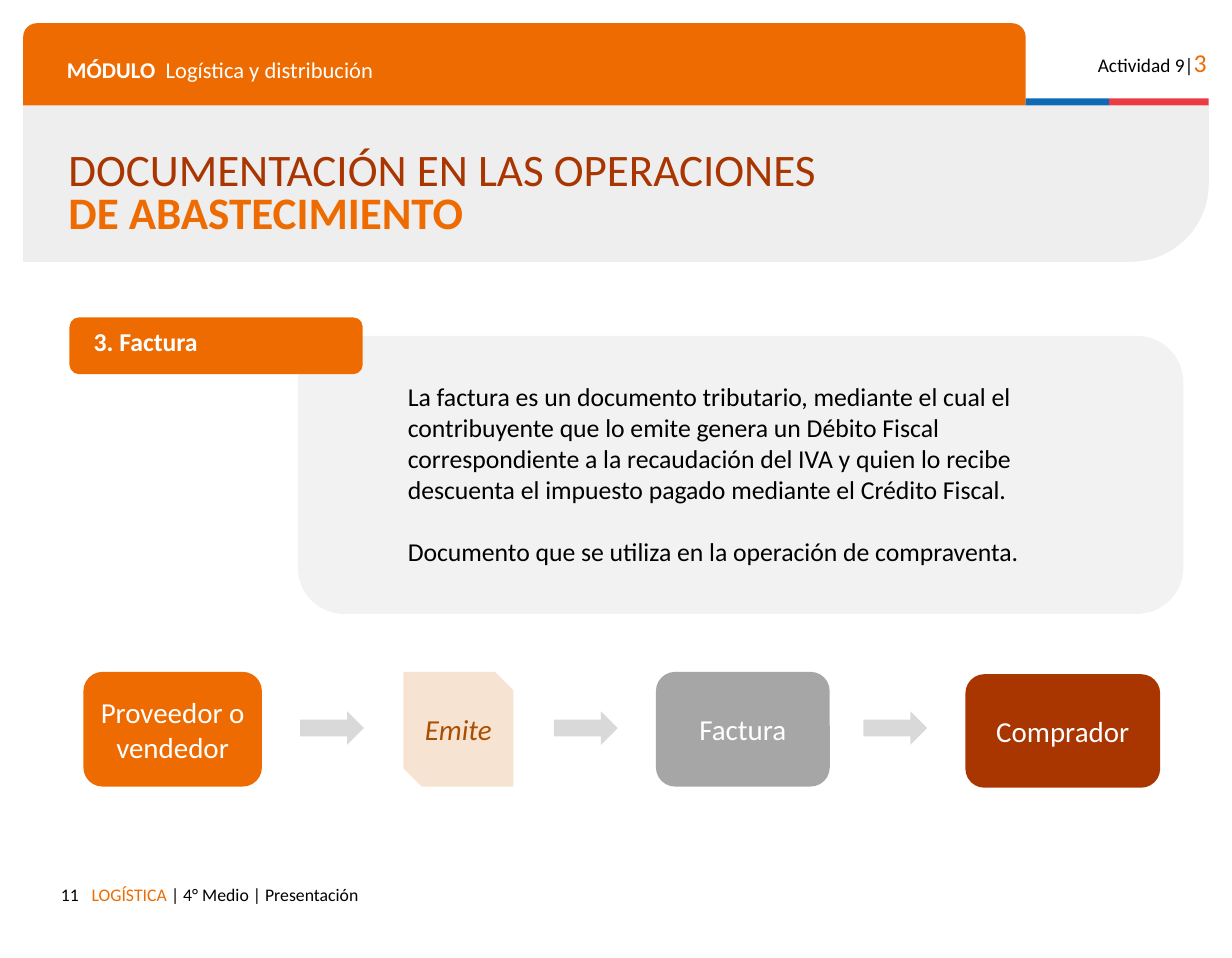
"""Build the slide about the invoice in supply operations."""
from dataclasses import dataclass

import pptx
import pptx.dml.color
import pptx.enum.shapes
import pptx.enum.text
import pptx.util

Inches = pptx.util.Inches
RGBColor = pptx.dml.color.RGBColor
MSO_SHAPE = pptx.enum.shapes.MSO_SHAPE
PP_ALIGN = pptx.enum.text.PP_ALIGN
MSO_ANCHOR = pptx.enum.text.MSO_ANCHOR
MSO_AUTO_SIZE = pptx.enum.text.MSO_AUTO_SIZE

ORANGE = RGBColor(0xED, 0x6B, 0x00)
RUST = RGBColor(0xA9, 0x35, 0x01)
BROWN = RGBColor(0xAA, 0x4E, 0x02)
PEACH = RGBColor(0xF7, 0xE3, 0xD1)
BLUE = RGBColor(0x0F, 0x69, 0xB4)
RED = RGBColor(0xEB, 0x3C, 0x46)
BLACK = RGBColor(0x00, 0x00, 0x00)
WHITE = RGBColor(0xFF, 0xFF, 0xFF)
BAND_GRAY = RGBColor(0xEE, 0xEE, 0xEE)
PANEL_GRAY = RGBColor(0xF2, 0xF2, 0xF2)
ARROW_GRAY = RGBColor(0xD9, 0xD9, 0xD9)
STEP_GRAY = RGBColor(0xA6, 0xA6, 0xA6)

FONT = "Calibri"


@dataclass(frozen=True)
class Run:
    text: str
    color: RGBColor = BLACK
    size: float = 16
    bold: bool = False
    italic: bool = False


@dataclass(frozen=True)
class Box:
    kind: MSO_SHAPE
    at: tuple[float, float, float, float]
    fill: RGBColor
    adj: tuple[float, ...] = ()
    label: Run | None = None


BACKGROUND = [
    Box(MSO_SHAPE.ROUND_2_SAME_RECTANGLE, (0.2, 0.2, 8.65, 0.71), ORANGE, (0.167, 0)),
    Box(MSO_SHAPE.RECTANGLE, (8.85, 0.85, 0.72, 0.06), BLUE),
    Box(MSO_SHAPE.RECTANGLE, (9.57, 0.85, 0.86, 0.06), RED),
    Box(MSO_SHAPE.ROUNDED_RECTANGLE, (2.57, 2.9, 7.64, 2.4), PANEL_GRAY),
    Box(MSO_SHAPE.ROUNDED_RECTANGLE, (0.6, 2.74, 2.53, 0.49), ORANGE),
]
STEPS = [
    Box(MSO_SHAPE.ROUNDED_RECTANGLE, (0.72, 5.8, 1.54, 0.99), ORANGE, (0.167,),
        Run("Proveedor o vendedor", WHITE, 18)),
    Box(MSO_SHAPE.SNIP_2_DIAG_RECTANGLE, (3.48, 5.8, 0.95, 0.99), PEACH, (0, 0.167),
        Run("Emite", BROWN, 18, italic=True)),
    Box(MSO_SHAPE.ROUNDED_RECTANGLE, (5.66, 5.8, 1.5, 0.99), STEP_GRAY, (0.167,),
        Run("Factura", WHITE, 18)),
    Box(MSO_SHAPE.ROUNDED_RECTANGLE, (8.33, 5.82, 1.68, 0.98), RUST, (0.167,),
        Run("Comprador", WHITE, 18)),
]
ARROWS = [Box(MSO_SHAPE.RIGHT_ARROW, (x, 6.14, 0.55, 0.29), ARROW_GRAY, (0.5, 0.5))
          for x in (2.59, 4.78, 7.45)]


def write(sp, paragraphs: list[list[Run]], *, align=PP_ALIGN.LEFT, anchor=MSO_ANCHOR.TOP,
          left: float = 0.1, pad: float = 0.1, line: float | None = None,
          gap: float = 0, grow: bool = False) -> None:
    tf = sp.text_frame
    tf.word_wrap = True
    tf.auto_size = MSO_AUTO_SIZE.SHAPE_TO_FIT_TEXT if grow else MSO_AUTO_SIZE.NONE
    tf.vertical_anchor = anchor
    tf.margin_left, tf.margin_right = Inches(left), Inches(0.1)
    tf.margin_top = tf.margin_bottom = Inches(pad)
    for i, runs in enumerate(paragraphs):
        p = tf.add_paragraph() if i else tf.paragraphs[0]
        p.alignment = align
        p.space_before = pptx.util.Pt(gap if i else 0)
        if line:
            p.line_spacing = line
        for run in runs:
            r = p.add_run()
            r.text = run.text
            r.font.name = FONT
            r.font.size = pptx.util.Pt(run.size)
            r.font.bold, r.font.italic = run.bold, run.italic
            r.font.color.rgb = run.color


def add_box(s, box: Box):
    sp = s.shapes.add_shape(box.kind, *map(Inches, box.at))
    sp.shadow.inherit = False
    sp.fill.solid()
    sp.fill.fore_color.rgb = box.fill
    sp.line.fill.background()
    for i, value in enumerate(box.adj):
        sp.adjustments[i] = value
    if box.label:
        write(sp, [[box.label]], align=PP_ALIGN.CENTER, anchor=MSO_ANCHOR.MIDDLE, pad=0.05)
    return sp


def add_text(s, at: tuple[float, float, float, float], paragraphs: list[list[Run]],
             **fmt) -> None:
    write(s.shapes.add_textbox(*map(Inches, at)), paragraphs, **fmt)


def add_title(s) -> None:
    sp = s.shapes.title
    sp.left, sp.top, sp.width, sp.height = map(Inches, (0.49, 1.51, 9.79, 0.35))
    write(sp, [[Run("DOCUMENTACIÓN EN LAS OPERACIONES", RUST, 28)],
               [Run("DE ABASTECIMIENTO", ORANGE, 28, bold=True)]],
          anchor=MSO_ANCHOR.MIDDLE, line=0.8)
    s.shapes._spTree.append(sp._element)


def main() -> None:
    prs = pptx.Presentation()
    prs.slide_width, prs.slide_height = Inches(10.63), Inches(8.27)
    s = prs.slides.add_slide(prs.slide_layouts[5])

    band = add_box(s, Box(MSO_SHAPE.ROUND_1_RECTANGLE, (0.2, 0.91, 10.23, 1.35),
                          BAND_GRAY, (0.5,)))
    band.rotation = 180
    band._element.spPr.xfrm.set("flipH", "1")
    for box in BACKGROUND + STEPS + ARROWS:
        add_box(s, box)
    add_title(s)

    add_text(s, (9.23, 0.3, 1.28, 0.38),
             [[Run("Actividad 9|", size=12), Run("3", ORANGE)]], align=PP_ALIGN.RIGHT)
    add_text(s, (0.48, 0.38, 8.14, 0.35),
             [[Run("MÓDULO ", WHITE, 14, bold=True),
               Run(" Logística y distribución", WHITE, 14)]])
    add_text(s, (0.71, 2.76, 3.47, 0.37),
             [[Run("3. Factura", WHITE, bold=True)]], pad=0.05, grow=True)
    add_text(s, (3.42, 3.24, 5.92, 1.72),
             [[Run("La factura es un documento tributario, mediante el cual el contribuyente "
                   "que lo emite genera un Débito Fiscal correspondiente a la recaudación del "
                   "IVA y quien lo recibe descuenta el impuesto pagado mediante el Crédito "
                   "Fiscal.")],
              [Run("Documento que se utiliza en la operación de compraventa.")]],
             pad=0.05, gap=19.5, grow=True)
    add_text(s, (0.41, 7.53, 7.42, 0.38),
             [[Run("LOGÍSTICA ", ORANGE, 11), Run("| 4° Medio | Presentación", size=11)]],
             left=0.38)
    add_text(s, (0.2, 7.53, 0.58, 0.29), [[Run("11", size=11)]], align=PP_ALIGN.RIGHT)

    prs.save("out.pptx")


if __name__ == "__main__":
    main()
